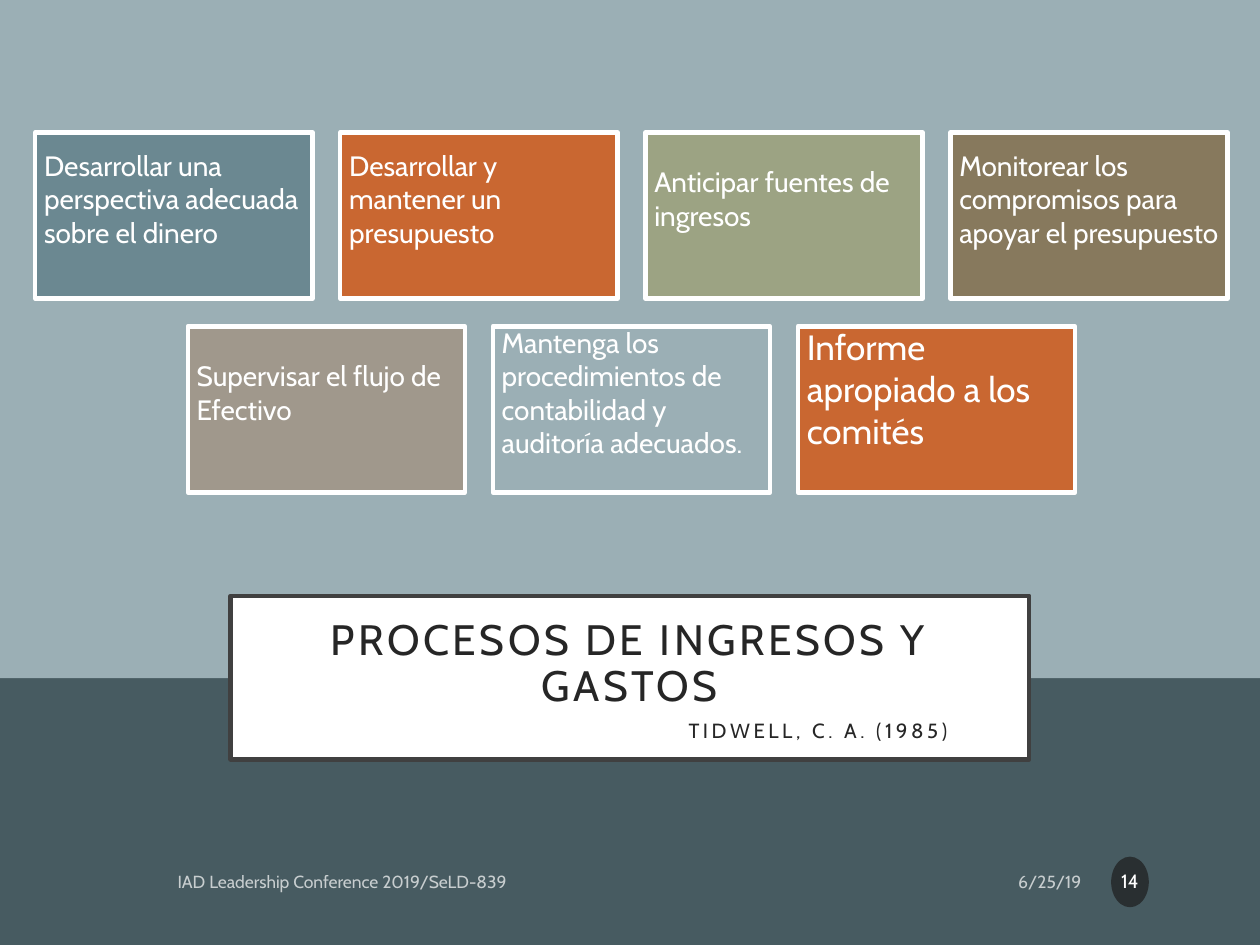
from pptx import Presentation
from pptx import util as u
from pptx.dml.color import RGBColor
from pptx.enum import shapes, text
from pptx.oxml.ns import qn
from lxml import etree

HUES = {
    "sky": "9BAFB5", "slate": "475B61", "white": "FFFFFF", "ink": "262626",
    "edge": "404040", "dot": "1D1D1D", "teal": "6B8891", "rust": "C96731",
    "sage": "9CA383", "olive": "87795D", "taupe": "A0988C",
}
FACE = "Cabin"

# Each row of cards: wording, fill, text size
ROWS = [
    [("Desarrollar una perspectiva adecuada sobre el dinero", "teal", 16),
     ("Desarrollar y mantener un presupuesto", "rust", 16),
     ("Anticipar fuentes de ingresos", "sage", 16),
     ("Monitorear los compromisos para apoyar el presupuesto", "olive", 16)],
    [("Supervisar el flujo de Efectivo", "taupe", 16),
     ("Mantenga los procedimientos de contabilidad y auditoría adecuados.", "sky", 16),
     ("Informe apropiado a los comités", "rust", 20)],
]
WIDE, HIGH, GAP = 5.59, 3.35, 0.56
MID, TOP = 12.73, 2.67


def tint(hue):
    return RGBColor.from_string(HUES[hue])


def apply(item, vals):
    for key, val in vals.items():
        setattr(item, key, val)


def fade(shape, share):
    """Make every colour set so far on the shape partly clear."""
    for node in shape._element.iter(qn("a:srgbClr")):
        etree.SubElement(node, qn("a:alpha")).set("val", str(share * 1000))


def paint(shape, fill, line=None):
    shape.fill.solid()
    shape.fill.fore_color.rgb = tint(fill)
    if line:
        shape.line.color.rgb = tint(line)
        shape.line.width = u.Pt(2.5)
    else:
        shape.line.fill.background()


def block(slide, kind, box, fill, line=None):
    shape = slide.shapes.add_shape(kind, *map(u.Cm, box))
    shape.shadow.inherit = False
    paint(shape, fill, line)
    return shape


def setup(shape, pads, anchor):
    """Set wrap, anchor and margins (left, top, right, bottom)."""
    frame = shape.text_frame
    sides = ("margin_left", "margin_top", "margin_right", "margin_bottom")
    apply(frame, {"word_wrap": True, "auto_size": text.MSO_AUTO_SIZE.NONE,
                  "vertical_anchor": anchor, **dict(zip(sides, map(u.Cm, pads)))})
    return frame


def write(para, words, size, hue, **form):
    run = para.add_run()
    run.text = words
    apply(run.font, {"name": FACE, "size": u.Pt(size)})
    run.font.color.rgb = tint(hue)
    apply(para, form)
    return run


def cards(slide):
    for i, row in enumerate(ROWS):
        left = MID - (len(row) * (WIDE + GAP) - GAP) / 2
        for j, (words, fill, size) in enumerate(row):
            box = (left + j * (WIDE + GAP), TOP + i * (HIGH + GAP), WIDE, HIGH)
            card = block(slide, shapes.MSO_SHAPE.RECTANGLE, box, fill, "white")
            # The wording sits half a line above the middle
            frame = setup(card, (0.18, 0, 0.18, size * 0.043), text.MSO_ANCHOR.MIDDLE)
            write(frame.paragraphs[0], words, size, "white",
                  alignment=text.PP_ALIGN.LEFT)


def heading(slide):
    title = slide.shapes.title
    apply(title, dict(zip(("left", "top", "width", "height"),
                          map(u.Cm, (4.65, 12.01, 16.1, 3.3)))))
    paint(title, "white", "edge")
    frame = setup(title, (0.51, 0.46, 0.51, 0.3), text.MSO_ANCHOR.TOP)
    main_run = write(frame.paragraphs[0], "PROCESOS DE INGRESOS Y GASTOS", 24.3, "ink",
                     alignment=text.PP_ALIGN.CENTER, line_spacing=0.9,
                     space_before=u.Pt(0))
    para = frame.add_paragraph()
    cite = write(para, "TIDWELL, C. A. (1985)", 11.7, "ink",
                 alignment=text.PP_ALIGN.LEFT, line_spacing=0.9, space_before=u.Pt(6))
    para._p.get_or_add_pPr().set("marL", str(u.Cm(8.72)))
    for run in (main_run, cite):
        run._r.get_or_add_rPr().set("spc", "200")


def footer(slide):
    notes = [("IAD Leadership Conference 2019/SeLD-839", 3.33, 12.29, text.PP_ALIGN.LEFT),
             ("6/25/19", 16.31, 5.74, text.PP_ALIGN.RIGHT)]
    for words, left, wide, align in notes:
        note = slide.shapes.add_textbox(*map(u.Cm, (left, 17.32, wide, 0.89)))
        frame = setup(note, (0.25, 0.13, 0.25, 0.13), text.MSO_ANCHOR.MIDDLE)
        write(frame.paragraphs[0], words, 10, "white", alignment=align)
        fade(note, 70)

    # Page number
    dot = block(slide, shapes.MSO_SHAPE.OVAL, (22.4, 17.27, 0.76, 1.02), "dot")
    fade(dot, 70)
    frame = setup(dot, (0, 0.13, 0, 0.13), text.MSO_ANCHOR.MIDDLE)
    frame.word_wrap = False
    write(frame.paragraphs[0], "14", 11, "white",
          alignment=text.PP_ALIGN.CENTER, line_spacing=0.9)


def main():
    deck = Presentation()
    apply(deck, {"slide_width": u.Cm(25.4), "slide_height": u.Cm(19.05)})
    slide = deck.slides.add_slide(deck.slide_layouts[5])

    # Backdrop: light above, dark band below, both behind the title
    slide.background.fill.solid()
    slide.background.fill.fore_color.rgb = tint("sky")
    for top, high, fill in ((0, 13.67, "sky"), (13.67, 5.38, "slate")):
        band = block(slide, shapes.MSO_SHAPE.RECTANGLE, (0, top, 25.4, high), fill)
        slide.shapes._spTree.insert(2, band._element)

    heading(slide)
    footer(slide)
    cards(slide)
    deck.save("out.pptx")


if __name__ == "__main__":
    main()
